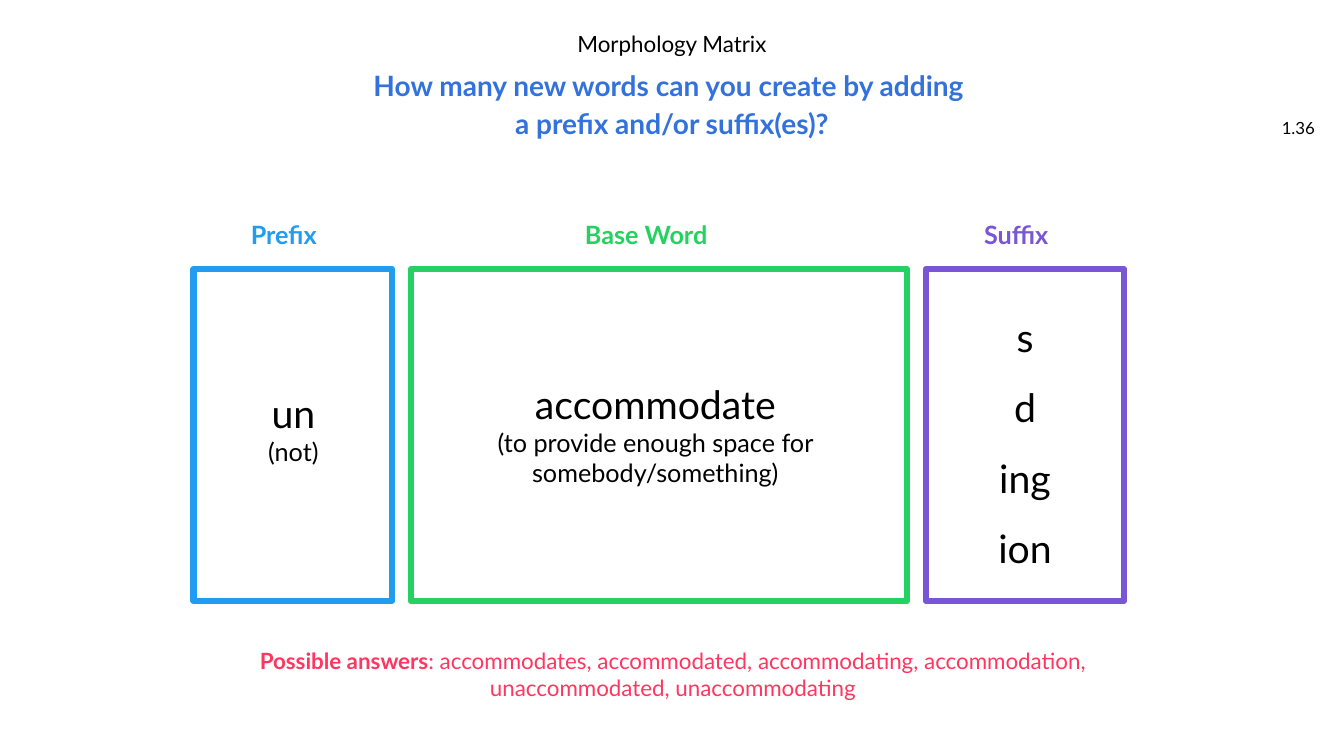
from collections import namedtuple

from pptx import Presentation
from pptx.dml.color import RGBColor
from pptx.enum.shapes import MSO_SHAPE
from pptx.enum.text import MSO_ANCHOR, MSO_AUTO_SIZE, PP_ALIGN
from pptx.util import Inches, Pt

RECTANGLE = MSO_SHAPE.RECTANGLE
LEFT, CENTER, RIGHT = PP_ALIGN.LEFT, PP_ALIGN.CENTER, PP_ALIGN.RIGHT
TOP, MIDDLE = MSO_ANCHOR.TOP, MSO_ANCHOR.MIDDLE
NO_AUTOFIT = MSO_AUTO_SIZE.NONE

BLACK = RGBColor(0x00, 0x00, 0x00)
QUESTION_BLUE = RGBColor(0x33, 0x72, 0xDC)
PREFIX_BLUE = RGBColor(0x21, 0x9C, 0xEE)
BASE_GREEN = RGBColor(0x25, 0xD1, 0x60)
SUFFIX_PURPLE = RGBColor(0x79, 0x56, 0xD6)
ANSWER_RED = RGBColor(0xFF, 0x37, 0x60)
FONT = "Lato"

Box = namedtuple("Box", "left top width height")
Column = namedtuple("Column", "heading color units heading_at words_at lines spacing")
SLIDE = Box(0, 0, Inches(13.33), Inches(7.5))
GAP_UNITS = 0.19

COLUMNS = [
    Column("Prefix", PREFIX_BLUE, 2, (23.9, -16.4, 52.3, 12.2),
           (16.8, 34.7, 67, 26.7), [("un", 28), ("(not)", 18)], 1.0),
    Column("Base Word", BASE_GREEN, 5, (33.1, -16.4, 33.7, 12.2),
           (-8.3, 31.9, 115.2, 35.9),
           [("accommodate", 28),
            ("(to provide enough space for somebody/something)", 18)], 1.0),
    Column("Suffix", SUFFIX_PURPLE, 2, (24.4, -16.4, 52.3, 12.2),
           (11.2, 4.6, 77.7, 87.2),
           [(suffix, 28) for suffix in ("s", "d", "ing", "ion")], 1.5),
]


def portion(box, left, top, width, height):
    """Return the part of a box given in percent of its size."""
    return Box(int(box.left + box.width * left / 100),
               int(box.top + box.height * top / 100),
               int(box.width * width / 100),
               int(box.height * height / 100))


def write(holder, lines, color=BLACK, align=CENTER, anchor=TOP, bold=False, spacing=1.0):
    """Fill a text holder with (text, size) lines in one style."""
    frame = holder.text_frame
    frame.word_wrap = True
    frame.auto_size = NO_AUTOFIT
    frame.vertical_anchor = anchor
    for index, (text, size) in enumerate(lines):
        line = frame.add_paragraph() if index else frame.paragraphs[0]
        line.text = text
        line.alignment = align
        line.line_spacing = spacing
        line.space_before = Pt(0)
        line.font.name = FONT
        line.font.size = Pt(size)
        line.font.bold = bold
        line.font.color.rgb = color


def place(holder, box):
    """Move a placeholder to a box."""
    holder.left, holder.top, holder.width, holder.height = box


def add_header(slide, box):
    """Place the topic, the question and the card number."""
    question, topic = slide.shapes.title, slide.placeholders[1]
    place(question, portion(box, 18.15, 8, 63.7, 10.93))
    write(question, [("How many new words can you create by adding ", 20),
                     ("a prefix and/or suffix(es)?", 20)],
          QUESTION_BLUE, anchor=MIDDLE, bold=True, spacing=Pt(27))
    place(topic, portion(box, 28.66, 3.73, 42.68, 4.67))
    write(topic, [("Morphology Matrix", 16)], spacing=0.9)
    card_number = slide.shapes.add_textbox(*portion(box, 93.85, 14.27, 4.73, 5.33))
    write(card_number, [("1.36", 12)], align=RIGHT, anchor=MIDDLE)


def add_column(slide, box, column):
    """Draw one framed column with its heading and word parts."""
    border = slide.shapes.add_shape(RECTANGLE, *box)
    border.shadow.inherit = False
    border.fill.background()
    border.line.color.rgb = column.color
    border.line.width = Pt(4.5)
    heading = slide.shapes.add_textbox(*portion(box, *column.heading_at))
    write(heading, [(column.heading, 18)], column.color, align=LEFT, bold=True)
    words = slide.shapes.add_textbox(*portion(box, *column.words_at))
    write(words, column.lines, spacing=column.spacing)


def add_matrix(slide, box):
    """Share the box among the columns by their units."""
    total = sum(column.units for column in COLUMNS) + GAP_UNITS * (len(COLUMNS) - 1)
    start = 0
    for column in COLUMNS:
        column_box = portion(box, 100 * start / total, 0, 100 * column.units / total, 100)
        add_column(slide, column_box, column)
        start += column.units + GAP_UNITS


def add_answers(slide, box):
    """Write the possible answers with a bold lead-in."""
    answers = slide.shapes.add_textbox(*box)
    write(answers, [("Possible answers", 16)], ANSWER_RED)
    line = answers.text_frame.paragraphs[0]
    line.runs[0].font.bold = True
    line.add_run().text = (": accommodates, accommodated, accommodating, accommodation, "
                           "unaccommodated, unaccommodating")


def main():
    """Build and save the slide."""
    deck = Presentation()
    deck.slide_width, deck.slide_height = SLIDE.width, SLIDE.height
    slide = deck.slides.add_slide(deck.slide_layouts[0])
    add_header(slide, SLIDE)
    add_matrix(slide, portion(SLIDE, 14.4, 35.6, 69.24, 43.87))
    add_answers(slide, portion(SLIDE, 13.13, 84.93, 73.89, 8.53))
    deck.save("out.pptx")


if __name__ == "__main__":
    main()
